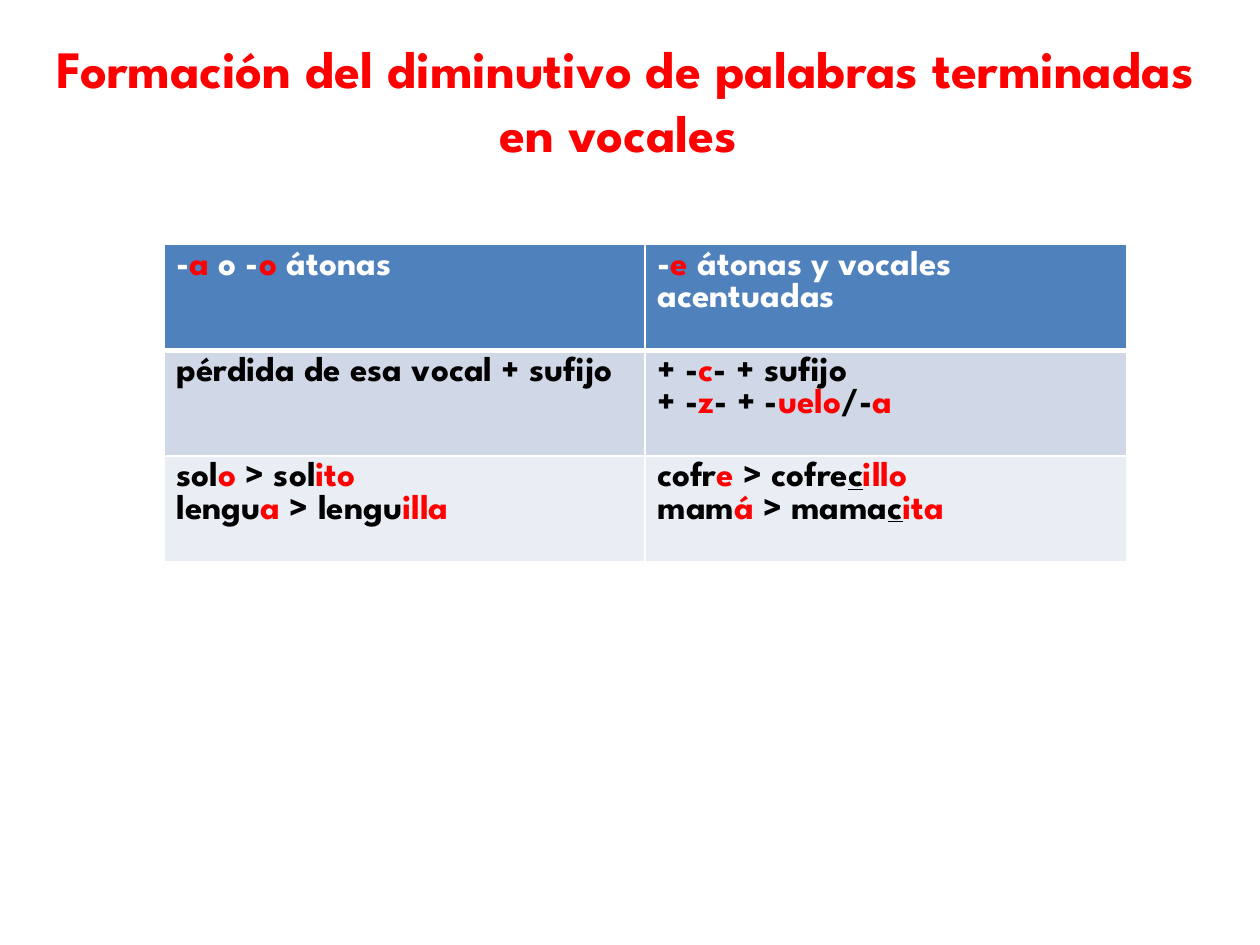
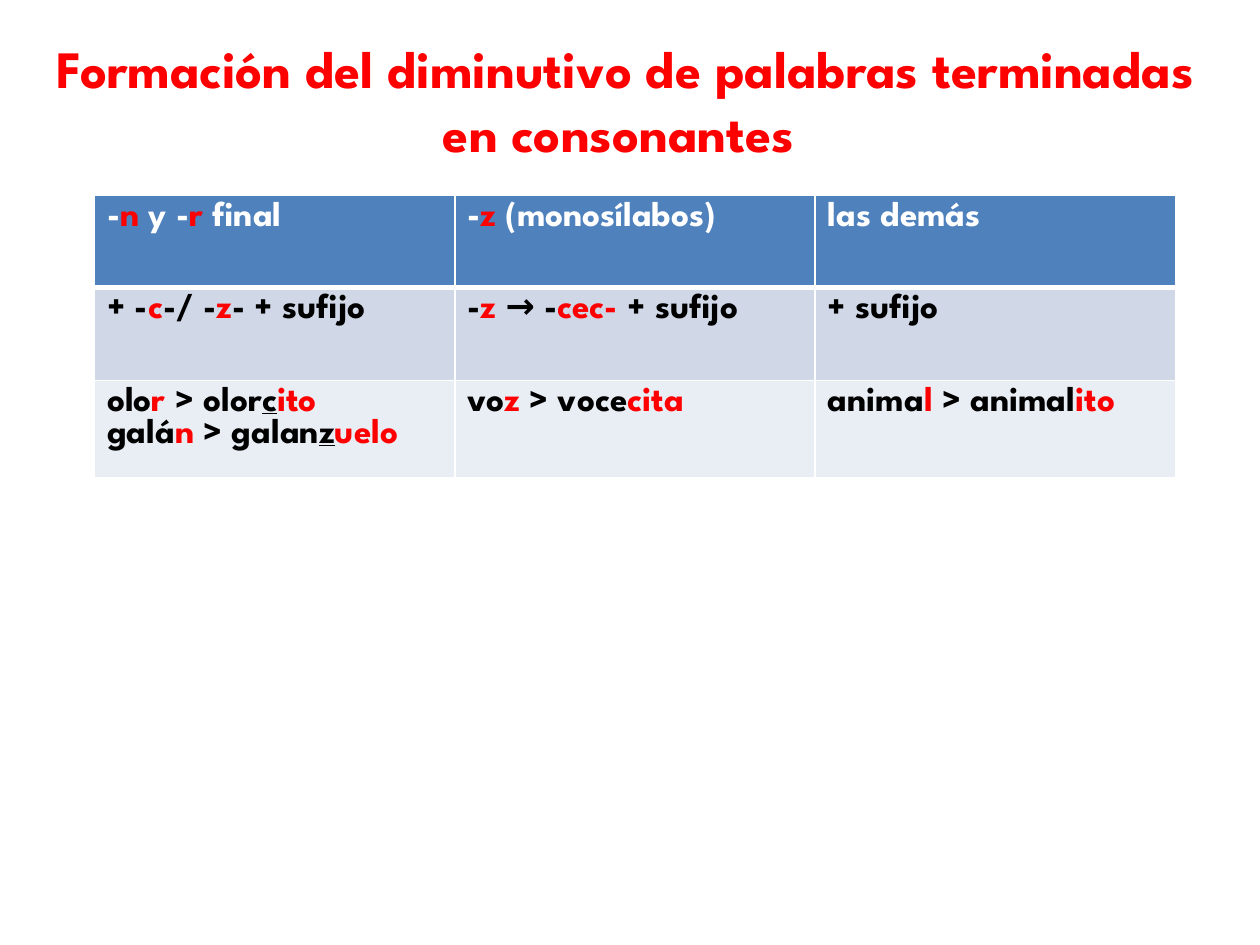
from pptx import Presentation
from pptx.dml.color import RGBColor
from pptx.enum.text import MSO_ANCHOR, PP_ALIGN
from pptx.oxml import parse_xml
from pptx.oxml.ns import nsdecls
from pptx.util import Inches, Pt

FONT = "League Spartan"
COLOURS = {
    "accent": "FF0000",
    "header": "4F81BD",
    "rule": "D0D8E8",
    "example": "E9EDF4",
    "text": "000000",
    "white": "FFFFFF",
}
ROW_KINDS = ["header", "rule", "example"]
TITLE_BOX = {"left": 0.28, "top": 0.23, "width": 9.37, "height": 1.11}

# In cell text, *stars* mark accented endings and _bars_ underlined letters.
SLIDES = [
    {
        "title": "Formación del diminutivo de palabras terminadas en vocales ",
        "left": 1.3, "top": 1.94, "column": 3.82, "heights": [0.84, 0.84, 0.84],
        "rows": [
            ["-*a* o -*o* átonas", "-*e* átonas y vocales acentuadas"],
            ["pérdida de esa vocal + sufijo",
             "+ -*c*- + sufijo\n+ -*z*- + -*uelo*/-*a*"],
            ["sol*o *> sol*ito*\nlengu*a *> lengu*illa*",
             "cofr*e *> cofre_c_*illo*\nmam*á *> mama_c_*ita*"],
        ],
    },
    {
        "title": "Formación del diminutivo de palabras terminadas en consonantes ",
        "left": 0.75, "top": 1.55, "column": 2.86, "heights": [0.73, 0.74, 0.77],
        "rows": [
            ["-*n* y -*r* final", "-*z* (monosílabos)", "las demás"],
            ["+ -*c*-/ -*z*- + sufijo", "-*z *→ -*cec-* + sufijo", "+ sufijo"],
            ["olo*r* > olor_c_*ito*\ngalá*n *> galan_z_*uelo*",
             "vo*z *> voce*cita*", "anima*l *> animal*ito*"],
        ],
    },
]


def add_span(para, text, size, colour, underline=None):
    span = para.add_run()
    span.text = text
    formats = {"name": FONT, "size": Pt(size), "bold": True, "underline": underline}
    for name, value in formats.items():
        setattr(span.font, name, value)
    span.font.color.rgb = RGBColor.from_string(COLOURS[colour])


def add_borders(cell, bottom):
    """Draw white cell borders, one point wide except for the bottom."""
    properties = cell._tc.get_or_add_tcPr()
    widths = {"lnL": 1, "lnR": 1, "lnT": 1, "lnB": bottom}
    for position, (side, width) in enumerate(widths.items()):
        properties.insert(position, parse_xml(
            f'<a:{side} {nsdecls("a")} w="{Pt(width)}"><a:solidFill>'
            f'<a:srgbClr val="{COLOURS["white"]}"/></a:solidFill></a:{side}>'))


deck = Presentation()
deck.slide_width, deck.slide_height = Inches(10), Inches(7.5)
title_only = deck.slide_layouts[5]

for content in SLIDES:
    page = deck.slides.add_slide(title_only)

    title = page.shapes.title
    for name, value in TITLE_BOX.items():
        setattr(title, name, Inches(value))
    title.text_frame.vertical_anchor = MSO_ANCHOR.TOP
    para = title.text_frame.paragraphs[0]
    para.alignment = PP_ALIGN.CENTER
    para.line_spacing = Pt(36.5)
    add_span(para, content["title"], 30, "accent")

    rows, heights = content["rows"], content["heights"]
    column_count = len(rows[0])
    table = page.shapes.add_table(
        len(rows), column_count, Inches(content["left"]), Inches(content["top"]),
        Inches(content["column"] * column_count), Inches(sum(heights))).table
    for column in table.columns:
        column.width = Inches(content["column"])

    for row_number, (kind, texts) in enumerate(zip(ROW_KINDS, rows)):
        table.rows[row_number].height = Inches(heights[row_number])
        base = "white" if kind == "header" else "text"
        for column_number, text in enumerate(texts):
            cell = table.cell(row_number, column_number)
            cell.fill.solid()
            cell.fill.fore_color.rgb = RGBColor.from_string(COLOURS[kind])
            add_borders(cell, 3 if kind == "header" else 1)
            for line_number, line in enumerate(text.split("\n")):
                frame = cell.text_frame
                para = frame.add_paragraph() if line_number else frame.paragraphs[0]
                for star_number, part in enumerate(line.split("*")):
                    colour = "accent" if star_number % 2 else base
                    for bar_number, piece in enumerate(part.split("_")):
                        if piece:
                            add_span(para, piece, 20, colour, bar_number % 2 == 1)

deck.save("out.pptx")
